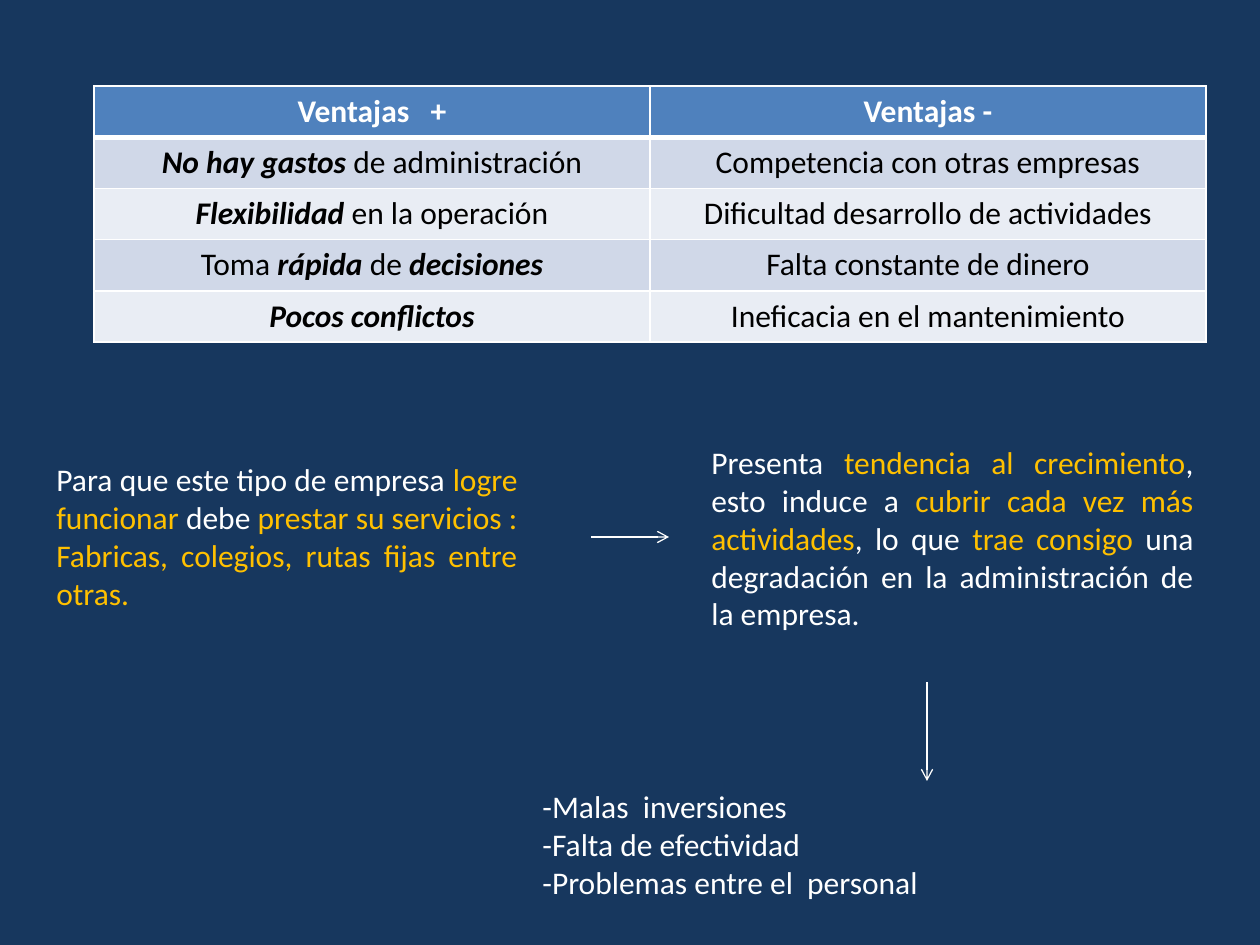
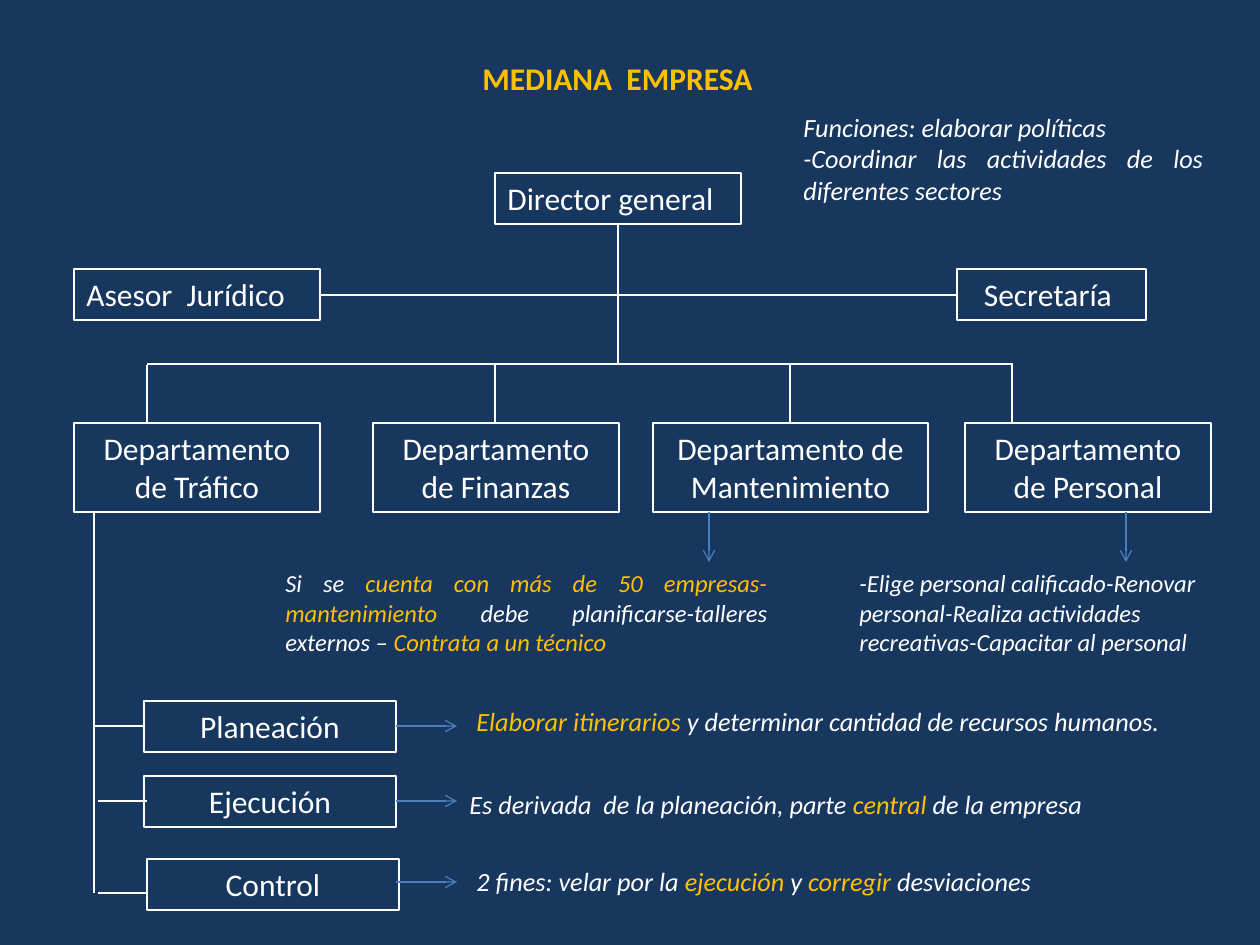
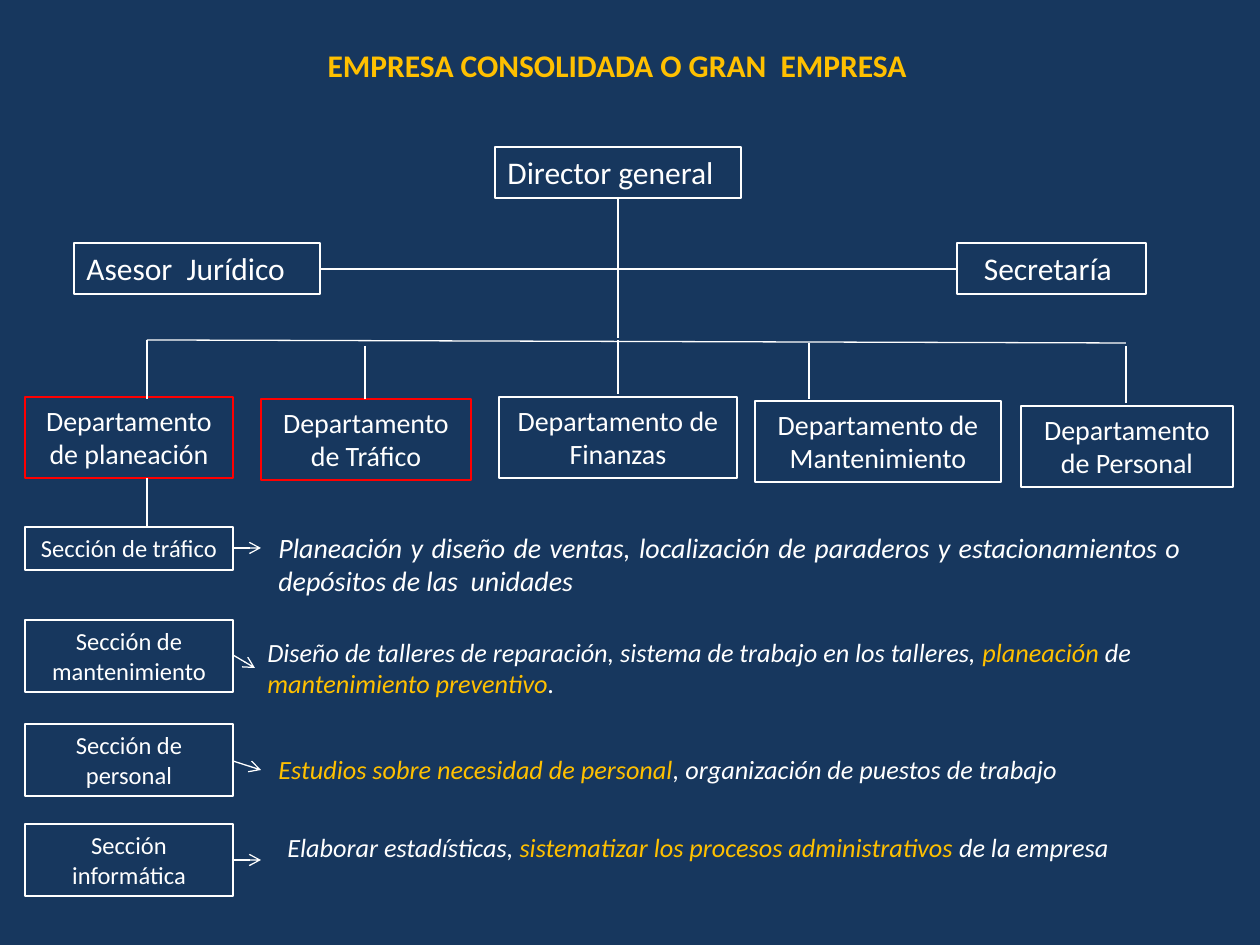
from lxml import etree
from pptx import Presentation
from pptx.dml.color import RGBColor
from pptx.enum.shapes import MSO_CONNECTOR, MSO_SHAPE
from pptx.enum.text import MSO_ANCHOR, MSO_AUTO_SIZE, PP_ALIGN
from pptx.oxml.ns import qn
from pptx.util import Emu, Pt

PX = 914400 / 126
LEFT, CENTER, JUSTIFY = PP_ALIGN.LEFT, PP_ALIGN.CENTER, PP_ALIGN.JUSTIFY
TOP, FIT = MSO_ANCHOR.TOP, MSO_AUTO_SIZE.SHAPE_TO_FIT_TEXT
RECT, STRAIGHT = MSO_SHAPE.RECTANGLE, MSO_CONNECTOR.STRAIGHT
TITLE_ONLY, BLANK = 5, 6
FONT = "Calibri"
NAVY, WHITE, GOLD, BLUE, RED, BLACK = (
    "17375E", "FFFFFF", "FFC000", "4B7EBC", "FF0000", "000000")
HEADER, BANDS = "4F81BD", ("D0D8E8", "E9EDF4")

# Content: asterisks enclose the emphasised words
# Slide 1: advantages and drawbacks
TABLE_BOX = (94, 86, 1112, 256)
TABLE = [
    ("Ventajas   +", "Ventajas -"),
    ("*No hay gastos* de administración", "Competencia con otras empresas"),
    ("*Flexibilidad* en la operación", "Dificultad desarrollo de actividades"),
    ("Toma *rápida* de *decisiones*", "Falta constante de dinero"),
    ("*Pocos conflictos*", "Ineficacia en el mantenimiento"),
]
REMARKS = [
    ((44, 454, 486, 165), JUSTIFY,
     "Para que este tipo de empresa *logre funcionar *debe *prestar su "
     "servicios : Fabricas, colegios, rutas fijas entre otras.*"),
    ((699, 437, 507, 204), JUSTIFY,
     "Presenta *tendencia al crecimiento*, esto induce a *cubrir cada vez más "
     "actividades*, lo que *trae consigo *una degradación en la "
     "administración de la empresa."),
    ((530, 781, 576, 127), LEFT,
     "-Malas  inversiones\n-Falta de efectividad\n-Problemas entre el  personal"),
]
REMARK_ARROWS = [(591, 537, 669, 537), (927, 682, 927, 781)]

# Head of both charts: left, drop below the director, width, text, alignment
OFFICES = [
    (495, 0, 246, "Director general", LEFT),
    (74, 96, 246, "Asesor  Jurídico", LEFT),
    (957, 96, 189, "Secretaría ", CENTER),
]

# Slide 2: medium company; departments are left, width, drop line x, text
MEDIUM_DEPTS = [
    (74, 246, 147, "Departamento de Tráfico"),
    (373, 246, 495, "Departamento de Finanzas"),
    (653, 275, 790, "Departamento de Mantenimiento"),
    (965, 246, 1012, "Departamento de Personal"),
]
MEDIUM_NOTES = [
    ((791, 105, 445, 108), 15, JUSTIFY,
     "Funciones: elaborar políticas\n"
     "-Coordinar las actividades de los  diferentes sectores"),
    ((847, 562, 384, 102), 14, LEFT,
     "-Elige personal calificado-Renovar personal-Realiza actividades "
     "recreativas-Capacitar al personal"),
    ((273, 562, 507, 102), 14, JUSTIFY,
     "Si se *cuenta con más de 50 empresas-mantenimiento *debe "
     "planificarse-talleres externos – *Contrata a un técnico *"),
]
NOTE_ARROWS_X = (709, 1126)
# Box left and top, tick left and y, arrow y, name, note box, note
STAGES = [
    (144, 701, 94, 726, 726, "Planeación", (464, 699, 741, 44),
     "*Elaborar itinerarios *y determinar cantidad de recursos humanos."),
    (144, 776, 98, 801, 801, "Ejecución", (457, 782, 777, 44),
     "Es derivada  de la planeación, parte *central* de la empresa"),
    (147, 859, 98, 893, 882, "Control", (464, 859, 743, 44),
     "2 fines: velar por la *ejecución* y *corregir* desviaciones "),
]

# Slide 3: large company; departments are left, top, width, border, text
LARGE_DEPTS = [
    (25, 397, 208, RED, "Departamento de planeación"),
    (261, 399, 210, RED, "Departamento de Tráfico"),
    (499, 397, 238, WHITE, "Departamento de Finanzas"),
    (755, 401, 246, WHITE, "Departamento de Mantenimiento"),
    (1021, 406, 212, WHITE, "Departamento de Personal"),
]
LARGE_DROPS = [(147, 340, 399), (365, 346, 399), (618, 340, 394),
               (809, 343, 399), (1126, 346, 403)]
# Top, height, name, arrow, note box, size, alignment, note
SECTIONS = [
    (527, 43, "Sección de tráfico", (233, 548, 261, 548),
     (266, 524, 927, 81), 16, JUSTIFY,
     "Planeación y diseño de ventas, localización de paraderos y "
     "estacionamientos o depósitos de las  unidades"),
    (620, 72, "Sección de mantenimiento", (233, 655, 255, 668),
     (255, 630, 971, 77), 15, LEFT,
     "Diseño de talleres de reparación, sistema de trabajo en los talleres, "
     "*planeación* de *mantenimiento preventivo*."),
    (724, 72, "Sección de personal", (233, 761, 261, 770),
     (266, 747, 927, 44), 15, LEFT,
     "*Estudios sobre necesidad de personal*, organización de puestos de trabajo"),
    (824, 72, "Sección informática", (233, 860, 261, 860),
     (275, 825, 927, 44), 15, LEFT,
     "Elaborar estadísticas, *sistematizar los procesos administrativos *de la empresa"),
]


# Shared helpers
def px(*values):
    return [Emu(round(v * PX)) for v in values]


def rgb(value):
    return RGBColor.from_string(value)


def write(tf, text, size, align, color=WHITE, accent=GOLD, bold=False,
          italic=False, strong=False):
    """Write the paragraphs; strong makes the emphasis bold italic."""
    for i, line in enumerate(text.split("\n")):
        p = tf.add_paragraph() if i else tf.paragraphs[0]
        p.alignment = align
        for j, part in enumerate(line.split("*")):
            if not part:
                continue
            marked = j % 2 == 1
            r = p.add_run()
            r.text = part
            r.font.name, r.font.size = FONT, Pt(size)
            r.font.bold = bold or (strong and marked)
            r.font.italic = italic or (strong and marked)
            r.font.color.rgb = rgb(accent if marked else color)


def frame(sp):
    tf = sp.text_frame
    tf.word_wrap, tf.auto_size, tf.vertical_anchor = True, FIT, TOP
    return tf


def add_text(slide, box, text, size=18, align=LEFT, italic=False):
    sp = slide.shapes.add_textbox(*px(*box))
    write(frame(sp), text, size, align, italic=italic)


def add_box(slide, box, text, size=18, align=CENTER, border=WHITE, italic=False):
    sp = slide.shapes.add_shape(RECT, *px(*box))
    sp.shadow.inherit = False
    sp.fill.background()
    sp.line.color.rgb = rgb(border)
    sp.line.width = Pt(0.75)
    write(frame(sp), text, size, align, italic=italic)


def add_line(slide, ends, color=WHITE, width=1, arrow=False):
    cx = slide.shapes.add_connector(STRAIGHT, *px(*ends))
    cx.line.color.rgb = rgb(color)
    cx.line.width = Pt(0.75 if arrow else width)
    if arrow:
        ln = cx.line.fill._xPr
        etree.SubElement(ln, qn("a:tailEnd"), type="arrow")
    etree.SubElement(cx._element.spPr, qn("a:effectLst"))


def set_title(slide, box, text, align):
    sp = slide.shapes.title
    sp.left, sp.top, sp.width, sp.height = px(*box)
    write(frame(sp), text, 18, align, color=GOLD, bold=True)


def set_borders(cell, widths):
    tcPr = cell._tc.get_or_add_tcPr()
    for side, width in zip("LRTB", widths):
        ln = etree.SubElement(tcPr, qn("a:ln" + side), w=str(Pt(width)))
        fill = etree.SubElement(ln, qn("a:solidFill"))
        etree.SubElement(fill, qn("a:srgbClr"), val=WHITE)


def add_head(slide, top):
    """Draw the director, the two offices and the lines joining them."""
    for x, drop, w, text, align in OFFICES:
        add_box(slide, (x, top + drop, w, 51), text, align=align)
    add_line(slide, (618, top + 51, 618, top + 191))
    add_line(slide, (320, top + 122, 957, top + 122))


# Slides
def build_table_slide(prs):
    s = prs.slides.add_slide(prs.slide_layouts[BLANK])
    table = s.shapes.add_table(len(TABLE), 2, *px(*TABLE_BOX)).table
    for i, row in enumerate(TABLE):
        for j, text in enumerate(row):
            cell = table.cell(i, j)
            set_borders(cell, (1, 1, 3 if i == 1 else 1, 3 if i == 0 else 1))
            cell.fill.solid()
            cell.fill.fore_color.rgb = rgb(BANDS[(i - 1) % 2] if i else HEADER)
            write(cell.text_frame, text, 18, CENTER, BLACK if i else WHITE,
                  BLACK, bold=i == 0, strong=True)
    for box, align, text in REMARKS:
        add_text(s, box, text, align=align)
    for ends in REMARK_ARROWS:
        add_line(s, ends, arrow=True)


def build_medium_slide(prs):
    s = prs.slides.add_slide(prs.slide_layouts[TITLE_ONLY])
    set_title(s, (464, 53, 307, 50), "MEDIANA  EMPRESA", CENTER)
    add_head(s, 173)
    add_line(s, (147, 364, 1013, 364))
    for x, w, drop_x, text in MEDIUM_DEPTS:
        add_box(s, (x, 423, w, 89), text)
        add_line(s, (drop_x, 365, drop_x, 423))
    for box, size, align, text in MEDIUM_NOTES:
        add_text(s, box, text, size, align, italic=True)
    for x in NOTE_ARROWS_X:
        add_line(s, (x, 512, x, 562), BLUE, arrow=True)
    add_line(s, (94, 512, 94, 893))
    for x, y, tick_x, tick_y, arrow_y, name, note_box, note in STAGES:
        add_box(s, (x, y, 252, 51), name)
        add_box(s, note_box, note, 15, JUSTIFY, NAVY, italic=True)
        add_line(s, (tick_x, tick_y, tick_x + 49, tick_y))
        add_line(s, (396, arrow_y, 457, arrow_y), BLUE, arrow=True)


def build_large_slide(prs):
    s = prs.slides.add_slide(prs.slide_layouts[TITLE_ONLY])
    set_title(s, (315, 40, 635, 50), "EMPRESA CONSOLIDADA O GRAN  EMPRESA", LEFT)
    add_head(s, 147)
    add_line(s, (147, 340, 1126, 343), width=0.75)
    for x, y, w, border, text in LARGE_DEPTS:
        add_box(s, (x, y, w, 81), text, 16, border=border)
    for x, y1, y2 in LARGE_DROPS:
        add_line(s, (x, y1, x, y2))
    add_line(s, (147, 478, 147, 527), width=0.75)
    for y, h, name, ends, note_box, size, align, note in SECTIONS:
        add_box(s, (25, y, 208, h), name, 14)
        add_text(s, note_box, note, size, align, italic=True)
        add_line(s, ends, arrow=True)


def main():
    prs = Presentation()
    prs.slide_width, prs.slide_height = px(1260, 945)
    fill = prs.slide_master.background.fill
    fill.solid()
    fill.fore_color.rgb = rgb(NAVY)
    build_table_slide(prs)
    build_medium_slide(prs)
    build_large_slide(prs)
    prs.save("out.pptx")


if __name__ == "__main__":
    main()
